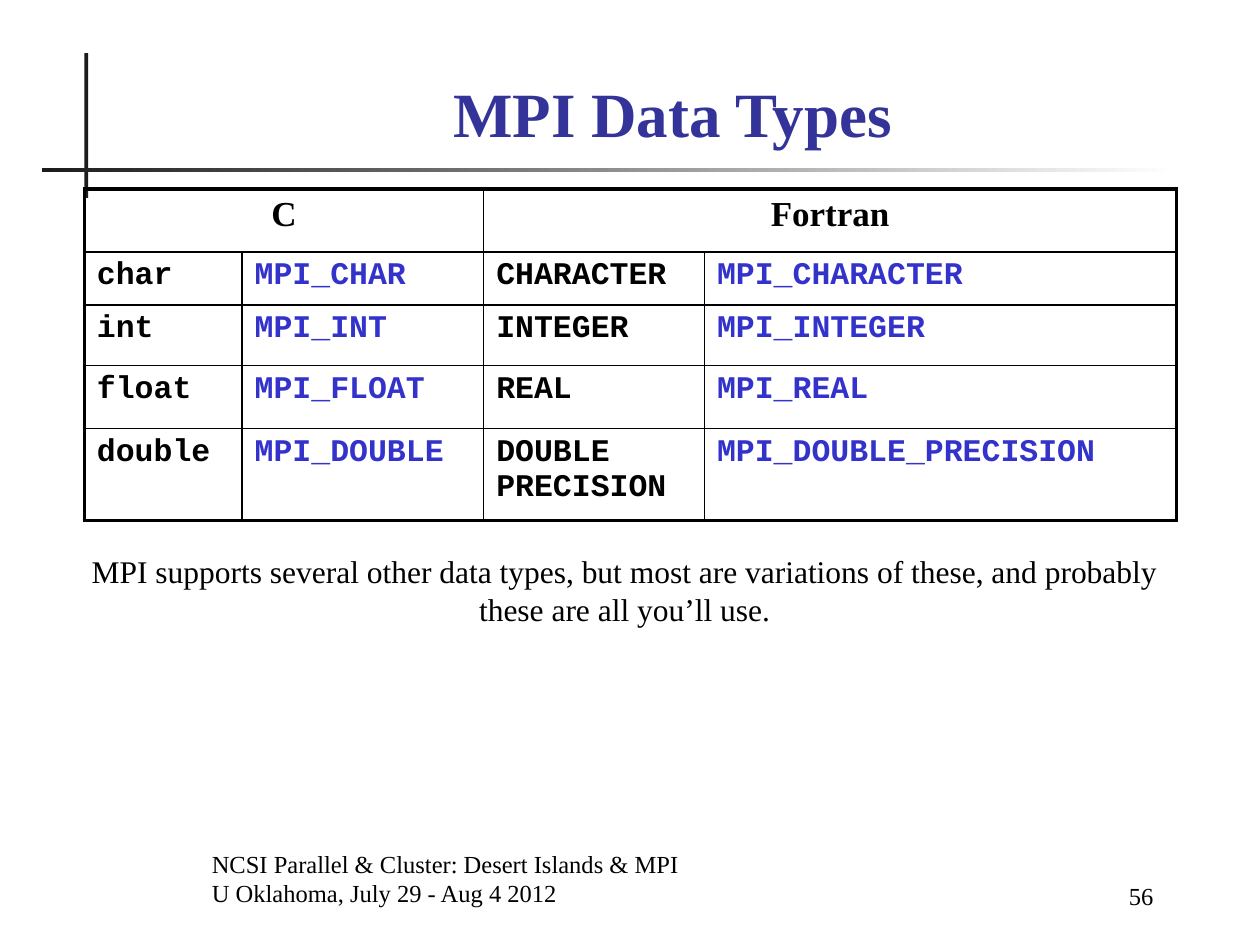
from lxml.etree import SubElement
from pptx import Presentation
from pptx.dml.color import RGBColor
from pptx.enum.shapes import MSO_SHAPE
from pptx.enum.text import MSO_ANCHOR, MSO_AUTO_SIZE, PP_ALIGN
from pptx.oxml.ns import qn
from pptx.util import Cm, Pt

COLORS = {"text": "000000", "title": "333399", "mpi": "3333CC", "rule": "1C1C1C", "white": "FFFFFF"}
SERIF, MONO = "Times New Roman", "Courier New"

TITLE = "MPI Data Types"
LANGUAGES = ["C", "Fortran"]
TYPES = [
    ("char", "MPI_CHAR", "CHARACTER", "MPI_CHARACTER"),
    ("int", "MPI_INT", "INTEGER", "MPI_INTEGER"),
    ("float", "MPI_FLOAT", "REAL", "MPI_REAL"),
    ("double", "MPI_DOUBLE", "DOUBLE PRECISION", "MPI_DOUBLE_PRECISION"),
]
COL_WIDTHS = [3.18, 4.87, 4.45, 9.52]
ROW_HEIGHTS = [1.27, 1.07, 1.22, 1.27, 1.85]
THIN, THICK = 1, 2.25
NOTE = ("MPI supports several other data types, but most are variations of these, "
        "and probably these are all you’ll use.")
FOOTER = "NCSI Parallel & Cluster: Desert Islands & MPI\nU Oklahoma, July 29 - Aug 4 2012"
TEXTS = [
    (FOOTER, (4.02, 17.15, 15.45, 1.27), 14, PP_ALIGN.LEFT, MSO_ANCHOR.BOTTOM),
    ("56", (19.9, 17.2, 3.6, 1.27), 14, PP_ALIGN.RIGHT, MSO_ANCHOR.BOTTOM),
    (NOTE, (1.48, 11, 22.23, 2.29), 18, PP_ALIGN.CENTER, MSO_ANCHOR.TOP),
]


def rgb(name):
    return RGBColor.from_string(COLORS[name])


def write(tf, text, size, color="text", font=SERIF, bold=False, align=PP_ALIGN.LEFT):
    tf.text = text
    for p in tf.paragraphs:
        p.alignment = align
        for r in p.runs:
            r.font.size, r.font.name, r.font.bold = Pt(size), font, bold
            r.font.color.rgb = rgb(color)


def add_rule(s, box):
    sp = s.shapes.add_shape(MSO_SHAPE.RECTANGLE, *map(Cm, box))
    sp.shadow.inherit = False
    sp.line.fill.background()
    return sp.fill


def set_borders(cell, widths):
    tc_pr = cell._tc.get_or_add_tcPr()
    for side, width in zip("LRTB", widths):
        ln = SubElement(tc_pr, qn(f"a:ln{side}"), w=str(Pt(width)))
        SubElement(SubElement(ln, qn("a:solidFill")), qn("a:srgbClr"), val=COLORS["text"])
    cell.fill.background()


def add_types_table(s):
    n_rows, n_cols = len(ROW_HEIGHTS), len(COL_WIDTHS)
    frame = s.shapes.add_table(n_rows, n_cols, Cm(1.7), Cm(3.81),
                               Cm(sum(COL_WIDTHS)), Cm(sum(ROW_HEIGHTS)))
    table = frame.table
    table.first_row = table.horz_banding = False
    for col, width in zip(table.columns, COL_WIDTHS):
        col.width = Cm(width)
    for row, height in zip(table.rows, ROW_HEIGHTS):
        row.height = Cm(height)
    for i, language in enumerate(LANGUAGES):
        cell = table.cell(0, 2 * i)
        cell.merge(table.cell(0, 2 * i + 1))
        write(cell.text_frame, language, 20, bold=True, align=PP_ALIGN.CENTER)
    for r, names in enumerate(TYPES, 1):
        for c, name in enumerate(names):
            write(table.cell(r, c).text_frame, name, 18, "mpi" if c % 2 else "text", MONO, True)
    for r in range(n_rows):
        for c in range(n_cols):
            cell = table.cell(r, c)
            if not cell.is_spanned:
                last = c + (cell.span_width if cell.is_merge_origin else 1)
                outer = (c == 0, last == n_cols, r == 0, r == n_rows - 1)
                set_borders(cell, [THICK if edge else THIN for edge in outer])


def main():
    """Build the MPI data types slide."""
    prs = Presentation()
    prs.slide_width, prs.slide_height = Cm(25.4), Cm(19.05)
    s = prs.slides.add_slide(prs.slide_layouts[5])

    fill = add_rule(s, (1.7, 1.07, 0.08, 2.92))
    fill.solid()
    fill.fore_color.rgb = rgb("rule")
    fill = add_rule(s, (0.84, 3.38, 22.86, 0.08))
    fill.gradient()
    fill.gradient_angle = 0
    for stop, name in zip(fill.gradient_stops, ("rule", "white")):
        stop.color.rgb = rgb(name)

    title = s.shapes.title
    title.left, title.top, title.width, title.height = map(Cm, (2.74, 1.27, 21.64, 1.88))
    tf = title.text_frame
    tf.auto_size, tf.vertical_anchor = MSO_AUTO_SIZE.NONE, MSO_ANCHOR.BOTTOM
    write(tf, TITLE, 36, "title", bold=True, align=PP_ALIGN.CENTER)

    add_types_table(s)
    for text, box, size, align, anchor in TEXTS:
        tf = s.shapes.add_textbox(*map(Cm, box)).text_frame
        tf.word_wrap, tf.vertical_anchor = True, anchor
        write(tf, text, size, align=align)

    prs.save("out.pptx")


if __name__ == "__main__":
    main()
